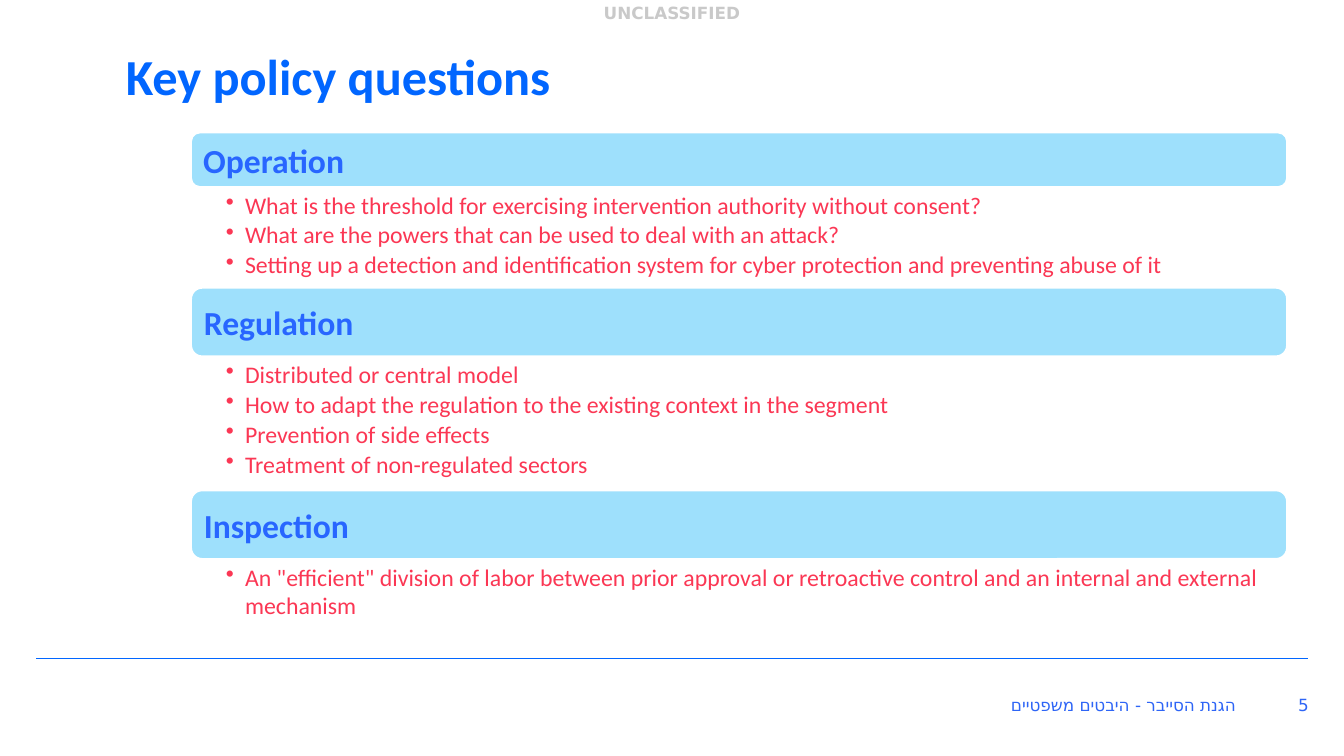
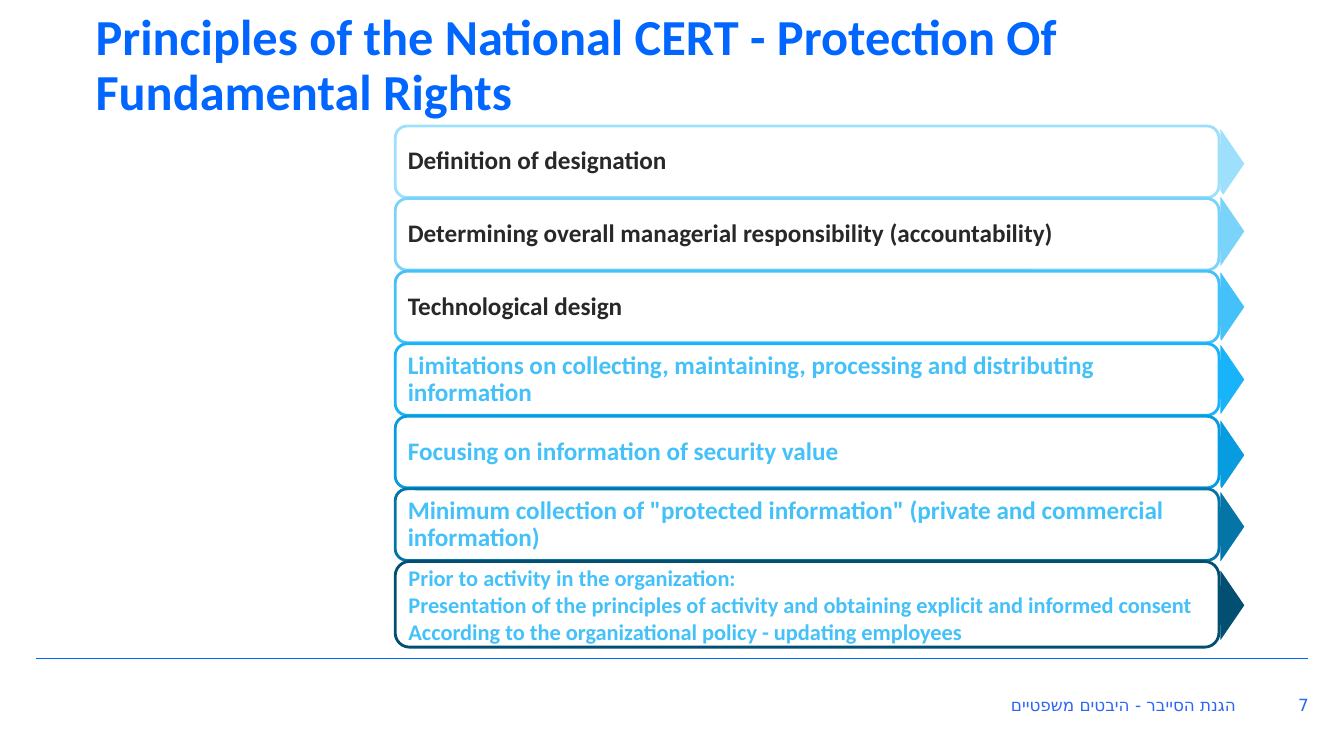
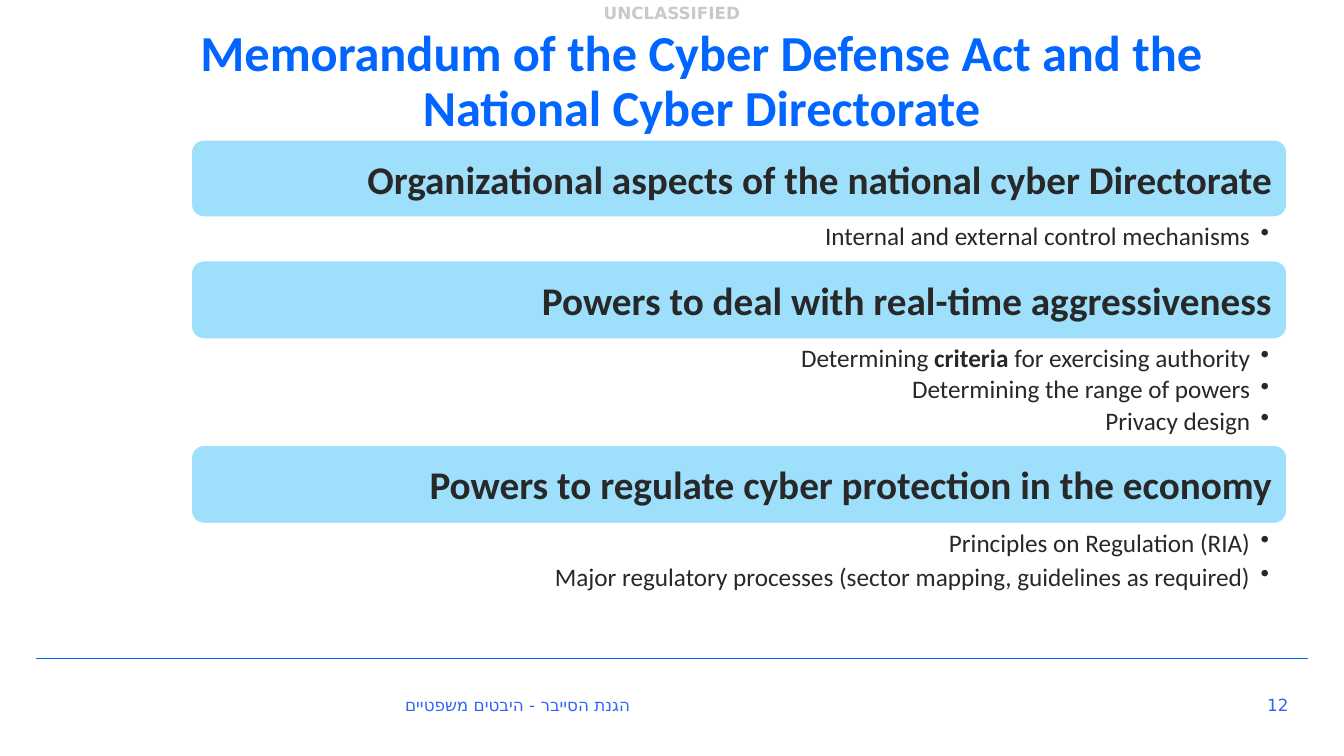
from lxml import etree
from pptx import Presentation
from pptx.dml.color import RGBColor
from pptx.enum.shapes import MSO_CONNECTOR, MSO_SHAPE
from pptx.enum.text import MSO_ANCHOR, PP_ALIGN
from pptx.oxml.ns import qn
from pptx.util import Inches, Pt

LEFT, CENTER, RIGHT = PP_ALIGN.LEFT, PP_ALIGN.CENTER, PP_ALIGN.RIGHT
TOP, MIDDLE = MSO_ANCHOR.TOP, MSO_ANCHOR.MIDDLE
ROUND_RECT, RIGHT_ARROW = MSO_SHAPE.ROUNDED_RECTANGLE, MSO_SHAPE.RIGHT_ARROW
STRAIGHT = MSO_CONNECTOR.STRAIGHT

WHITE = RGBColor(0xFF, 0xFF, 0xFF)
TITLE_BLUE = RGBColor(0x01, 0x66, 0xFF)
HEADING_BLUE = RGBColor(0x28, 0x66, 0xFF)
FOOTER_BLUE = RGBColor(0x2E, 0x65, 0xF6)
BAND_BLUE = RGBColor(0x9E, 0xE0, 0xFC)
SKY_BLUE = RGBColor(0x45, 0xC1, 0xF9)
RED = RGBColor(0xFB, 0x37, 0x54)
DARK = RGBColor(0x28, 0x28, 0x28)
GRAY = RGBColor(0xC9, 0xC9, 0xC9)
ROW_COLORS = [BAND_BLUE, RGBColor(0x79, 0xD3, 0xFB), SKY_BLUE,
              RGBColor(0x18, 0xB3, 0xF8), RGBColor(0x07, 0x9C, 0xDF),
              RGBColor(0x05, 0x75, 0xA7), RGBColor(0x03, 0x4F, 0x71)]

BODY_FONT, FOOTER_FONT = "Calibri", "DejaVu Sans"
FOOTER_TEXT = "הגנת הסייבר - היבטים משפטיים"
BAND_LEFT, BAND_WIDTH = 1.89, 10.88

POLICY_SECTIONS = [
    ("Operation", 0.55, 0.99, 0.9, [
        "What is the threshold for exercising intervention authority without consent?",
        "What are the powers that can be used to deal with an attack?",
        "Setting up a detection and identification system for cyber protection and preventing abuse of it"]),
    ("Regulation", 0.69, 1.32, 0.9, [
        "Distributed or central model",
        "How to adapt the regulation to the existing context in the segment",
        "Prevention of side effects",
        "Treatment of non-regulated sectors"]),
    ("Inspection", 0.69, 0.65, 0.9, [
        'An "efficient" division of labor between prior approval or retroactive control '
        "and an internal and external mechanism"]),
]
ACT_SECTIONS = [
    ("Organizational aspects of the national cyber Directorate", 0.78, 0.42, 0.9, [
        "Internal and external control mechanisms"]),
    ("Powers to deal with real-time aggressiveness", 0.79, 1.04, 0.9, [
        "Determining **criteria** for exercising authority",
        "Determining the range of powers",
        "Privacy design"]),
    ("Powers to regulate cyber protection in the economy", 0.79, 0.74, 1.0, [
        "Principles on Regulation (RIA)",
        "Major regulatory processes (sector mapping, guidelines as required)"]),
]
PRINCIPLES = [
    (1.23, DARK, ["Definition of designation"]),
    (1.90, DARK, ["Determining overall managerial responsibility (accountability)"]),
    (2.65, DARK, ["Technological design"]),
    (3.37, SKY_BLUE, ["Limitations on collecting, maintaining, processing and distributing information"]),
    (4.12, SKY_BLUE, ["Focusing on information of security value"]),
    (4.83, SKY_BLUE, ['Minimum collection of "protected information" (private and commercial information)']),
    (5.61, SKY_BLUE, [
        "Prior to activity in the organization:",
        "Presentation of the principles of activity and obtaining explicit and informed consent",
        "According to the organizational policy - updating employees"]),
]


def write(sp, lines, size, color, font=BODY_FONT, bold=False, align=LEFT, rtl=False,
          anchor=TOP, insets=(0.1, 0.05, 0.1, 0.05), first_spacing=1.0, spacing=1.0,
          bullet=False):
    tf = sp.text_frame
    tf.word_wrap = True
    tf.vertical_anchor = anchor
    tf.margin_left, tf.margin_top, tf.margin_right, tf.margin_bottom = map(Inches, insets)
    for i, line in enumerate(lines):
        p = tf.add_paragraph() if i else tf.paragraphs[0]
        pPr = p._p.get_or_add_pPr()
        if rtl:
            pPr.set("rtl", "1")
        if bullet:
            pPr.set("marL", str(Inches(0.19)))
            pPr.set("indent", str(-Inches(0.19)))
            etree.SubElement(pPr, qn("a:buChar")).set("char", "•")
            p.space_after = Pt(3)
        p.alignment = align
        p.line_spacing = spacing if i else first_spacing
        for j, part in enumerate(line.split("**")):
            r = p.add_run()
            r.text = part
            r.font.name = font
            r.font.size = Pt(size)
            r.font.bold = bold or j % 2 == 1
            r.font.color.rgb = color
            etree.SubElement(r._r.get_or_add_rPr(), qn("a:cs")).set("typeface", font)


def add_text(s, x, y, w, h, lines, size, color, **fmt):
    sp = s.shapes.add_textbox(Inches(x), Inches(y), Inches(w), Inches(h))
    write(sp, lines, size, color, **fmt)


def add_shape(s, kind, x, y, w, h, fill, line):
    sp = s.shapes.add_shape(kind, Inches(x), Inches(y), Inches(w), Inches(h))
    sp.shadow.inherit = False
    sp.fill.solid()
    sp.fill.fore_color.rgb = fill
    sp.line.color.rgb = line
    sp.line.width = Pt(2)
    return sp


def add_frame(prs, number, rtl=True):
    s = prs.slides.add_slide(prs.slide_layouts[6])
    rule = s.shapes.add_connector(STRAIGHT, Inches(0.36), Inches(6.53),
                                  Inches(12.97), Inches(6.53))
    rule.line.color.rgb = TITLE_BLUE
    rule.line.width = Pt(1)
    etree.SubElement(rule._element.spPr, qn("a:effectLst"))
    for x, w, text in ((3.92, 8.44, FOOTER_TEXT), (12.47, 0.61, str(number))):
        add_text(s, x, 6.8, w, 0.39, [text], 12, FOOTER_BLUE, font=FOOTER_FONT,
                 align=RIGHT if rtl else LEFT, rtl=rtl, anchor=MIDDLE)
    return s


def add_title(s, x, y, text, align=LEFT):
    add_text(s, x, y, 11.62, 0.72, [text], 36, TITLE_BLUE, bold=True, align=align,
             first_spacing=0.9)


def add_marking(s):
    add_text(s, 4.91, 0, 3.51, 0.26, ["UNCLASSIFIED"], 12, GRAY, font=FOOTER_FONT,
             bold=True, align=CENTER, first_spacing=0.9)


def add_sections(s, top, sections, head_size, head_color, size, color, inset, rtl=False):
    align = RIGHT if rtl else LEFT
    for heading, head_height, body_height, spacing, bullets in sections:
        band = add_shape(s, ROUND_RECT, BAND_LEFT, top, BAND_WIDTH, head_height,
                         BAND_BLUE, WHITE)
        write(band, [heading], head_size, head_color, bold=True, align=align, rtl=rtl,
              anchor=MIDDLE, insets=(inset,) * 4)
        top += head_height
        add_text(s, BAND_LEFT, top, BAND_WIDTH, body_height, bullets, size, color,
                 align=align, rtl=rtl, insets=(0.35, 0.03, 0.18, 0.03),
                 spacing=spacing, bullet=True)
        top += body_height


def add_principles(s):
    for (arrow_top, _, _), shade in zip(PRINCIPLES, ROW_COLORS):
        add_shape(s, RIGHT_ARROW, 11.82, arrow_top, 0.54, 0.79, shade, WHITE)
    for i, ((_, color, lines), shade) in enumerate(zip(PRINCIPLES, ROW_COLORS)):
        single = len(lines) == 1
        row = add_shape(s, ROUND_RECT, 3.92, 1.25 + 0.72 * i, 8.17,
                        0.71 if single else 0.85, WHITE, shade)
        write(row, lines, 18 if single else 16, color, bold=True, anchor=MIDDLE,
              insets=(0.09,) * 4, first_spacing=0.9 if single else 1.0)


def main():
    prs = Presentation()
    prs.slide_width, prs.slide_height = Inches(13.33), Inches(7.5)

    s = add_frame(prs, 5)
    add_title(s, 1.15, 0.47, "Key policy questions")
    add_sections(s, 1.31, POLICY_SECTIONS, 24, HEADING_BLUE, 17, RED, 0.1)
    add_marking(s)

    s = add_frame(prs, 7)
    add_principles(s)
    add_title(s, 0.85, 0.07,
              "Principles of the National CERT - Protection Of Fundamental Rights")

    s = add_frame(prs, 12, rtl=False)
    add_sections(s, 1.38, ACT_SECTIONS, 28, DARK, 18, DARK, 0.12, rtl=True)
    add_title(s, 1.15, 0.23,
              "Memorandum of the Cyber Defense Act and the National Cyber Directorate",
              align=CENTER)
    add_marking(s)

    prs.save("out.pptx")


if __name__ == "__main__":
    main()
